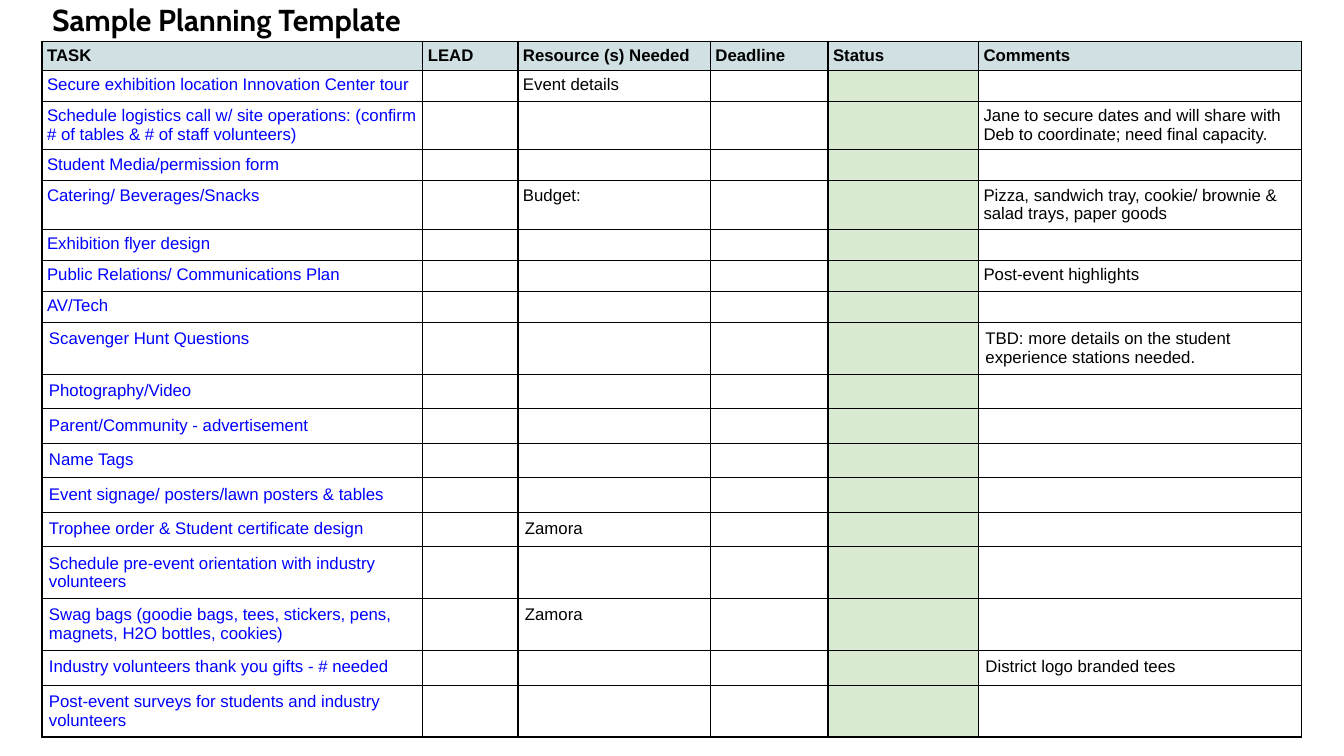
from collections import namedtuple
from dataclasses import dataclass

from lxml import etree
from pptx import Presentation
from pptx import util as u
from pptx.dml.color import RGBColor
from pptx.enum import text
from pptx.oxml import ns

Box = namedtuple("Box", "left top width height")
Task = namedtuple("Task", "name resource comment lines inset", defaults=("", "", 1, 3.6))


@dataclass(frozen=True)
class Theme:
    ink: str = "000000"
    task: str = "0000FF"
    header: str = "D0E0E3"
    status: str = "D9EAD3"
    title_font: str = "Cabin"
    body_font: str = "Arial"
    title_size: float = 21.6
    body_size: float = 12
    border: float = 1


THEME = Theme()
ROOMY = 5
HEADINGS = ["TASK", "LEAD", "Resource (s) Needed", "Deadline", "Status", "Comments"]
COLUMN_WIDTHS = [272, 68, 137.5, 84, 107.5, 231]
HEADER_HEIGHT = 20.7
ROW_HEIGHTS = {(3.6, 1): 22.2, (3.6, 2): 34.6, (ROOMY, 1): 24.6, (ROOMY, 2): 37.1}

TASKS = [
    Task("Secure exhibition location Innovation Center tour", "Event details"),
    Task("Schedule logistics call w/ site operations: (confirm # of tables & # of staff volunteers)",
         comment="Jane to secure dates and will share with Deb to coordinate; need final capacity.",
         lines=2),
    Task("Student Media/permission form"),
    Task("Catering/ Beverages/Snacks", "Budget:",
         "Pizza, sandwich tray, cookie/ brownie & salad trays, paper goods", 2),
    Task("Exhibition flyer design"),
    Task("Public Relations/ Communications Plan", comment="Post-event highlights"),
    Task("AV/Tech"),
    Task("Scavenger Hunt Questions",
         comment="TBD: more details on the student experience stations needed.",
         lines=2, inset=ROOMY),
    Task("Photography/Video", inset=ROOMY),
    Task("Parent/Community - advertisement", inset=ROOMY),
    Task("Name Tags", inset=ROOMY),
    Task("Event signage/ posters/lawn posters & tables", inset=ROOMY),
    Task("Trophee order & Student certificate design", "Zamora", inset=ROOMY),
    Task("Schedule pre-event orientation with industry volunteers", lines=2, inset=ROOMY),
    Task("Swag bags (goodie bags, tees, stickers, pens, magnets, H2O bottles, cookies)",
         "Zamora", lines=2, inset=ROOMY),
    Task("Industry volunteers thank you gifts - # needed",
         comment="District logo branded tees", inset=ROOMY),
    Task("Post-event surveys for students and industry volunteers", lines=2, inset=ROOMY),
]


def add_span(para, words, font, size, color, bold=False):
    span = para.add_run()
    span.text = words
    span.font.name = font
    span.font.size = u.Pt(size)
    span.font.bold = bold
    span.font.color.rgb = RGBColor.from_string(color)


def add_borders(cell):
    properties = cell._tc.get_or_add_tcPr()
    for side in ("lnL", "lnR", "lnT", "lnB"):
        line = etree.SubElement(properties, ns.qn(f"a:{side}"), w=str(u.Pt(THEME.border)))
        paint = etree.SubElement(line, ns.qn("a:solidFill"))
        etree.SubElement(paint, ns.qn("a:srgbClr"), val=THEME.ink)


def fill_cell(cell, words, inset, color, fill=None, bold=False):
    cell.margin_left = cell.margin_right = u.Pt(inset)
    cell.margin_top = cell.margin_bottom = u.Pt(inset)
    cell.vertical_anchor = text.MSO_ANCHOR.TOP
    add_borders(cell)
    if fill:
        cell.fill.solid()
        cell.fill.fore_color.rgb = RGBColor.from_string(fill)
    else:
        cell.fill.background()
    para = cell.text_frame.paragraphs[0]
    if words:
        add_span(para, words, THEME.body_font, THEME.body_size, color, bold)
    else:
        etree.SubElement(para._p, ns.qn("a:endParaRPr"), sz=str(int(THEME.body_size * 100)))


def place_title(page, box):
    title = page.shapes.title
    title.left, title.top, title.width, title.height = map(u.Pt, box)
    frame = title.text_frame
    frame.auto_size = text.MSO_AUTO_SIZE.NONE
    frame.word_wrap = True
    frame.vertical_anchor = text.MSO_ANCHOR.MIDDLE
    frame.margin_left = frame.margin_right = u.Pt(7.2)
    frame.margin_top = frame.margin_bottom = 0
    para = frame.paragraphs[0]
    para.alignment = text.PP_ALIGN.LEFT
    para.line_spacing = 0.9
    add_span(para, "Sample Planning Template", THEME.title_font, THEME.title_size,
             THEME.ink, True)


def place_plan(page, box):
    table = page.shapes.add_table(len(TASKS) + 1, len(HEADINGS), *map(u.Pt, box)).table
    table.first_row = table.horz_banding = False
    for column, width in zip(table.columns, COLUMN_WIDTHS):
        column.width = u.Pt(box.width * width / sum(COLUMN_WIDTHS))
    heights = [HEADER_HEIGHT] + [ROW_HEIGHTS[task.inset, task.lines] for task in TASKS]
    for row, height in zip(table.rows, heights):
        row.height = u.Pt(height)
    for cell, heading in zip(table.rows[0].cells, HEADINGS):
        fill_cell(cell, heading, 3.6, THEME.ink, THEME.header, True)
    for number, task in enumerate(TASKS, 1):
        entries = {"TASK": task.name, "Resource (s) Needed": task.resource,
                   "Comments": task.comment}
        for cell, heading in zip(table.rows[number].cells, HEADINGS):
            color = THEME.task if heading == "TASK" else THEME.ink
            fill = THEME.status if heading == "Status" else None
            fill_cell(cell, entries.get(heading, ""), task.inset, color, fill)


def main():
    deck = Presentation()
    deck.slide_width, deck.slide_height = u.Pt(960), u.Pt(540)
    page = deck.slides.add_slide(deck.slide_layouts[5])
    place_title(page, Box(30, 6.5, 828, 18.7))
    place_plan(page, Box(30, 29.5, 900, 497))
    deck.save("out.pptx")


if __name__ == "__main__":
    main()
